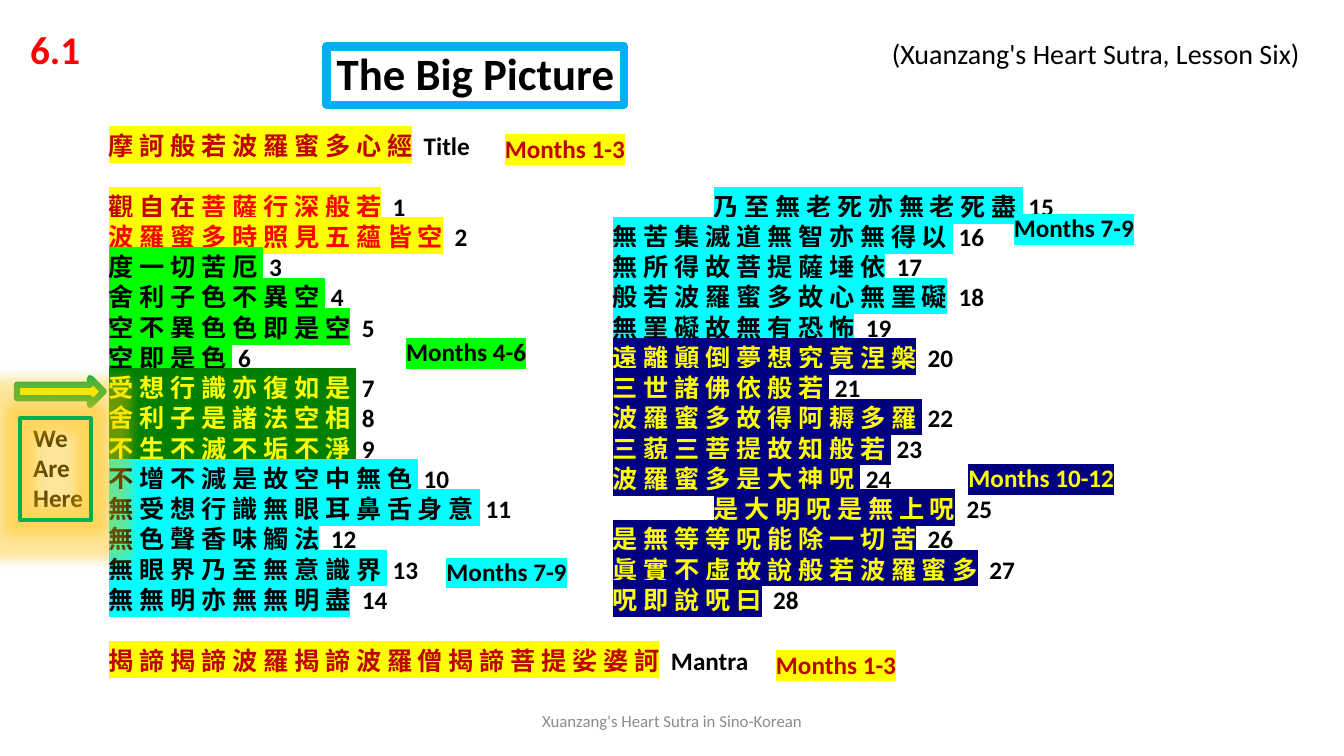
from dataclasses import dataclass

from lxml import etree
from pptx import Presentation
from pptx.dml.color import RGBColor
from pptx.enum.shapes import MSO_SHAPE
from pptx.enum.text import MSO_ANCHOR, MSO_AUTO_SIZE, PP_ALIGN
from pptx.oxml.ns import qn
from pptx.util import Pt

RECTANGLE, RIGHT_ARROW = MSO_SHAPE.RECTANGLE, MSO_SHAPE.RIGHT_ARROW
LEFT, CENTER = PP_ALIGN.LEFT, PP_ALIGN.CENTER
TOP, MIDDLE = MSO_ANCHOR.TOP, MSO_ANCHOR.MIDDLE
NO_AUTOFIT = MSO_AUTO_SIZE.NONE

BLACK = RGBColor(0x00, 0x00, 0x00)
GRAY = RGBColor(0x8C, 0x8C, 0x8C)
RED = RGBColor(0xFF, 0x00, 0x00)
DARK_RED = RGBColor(0xC0, 0x00, 0x00)
YELLOW = RGBColor(0xFF, 0xFF, 0x00)
LIME = RGBColor(0x00, 0xFF, 0x00)
GREEN = RGBColor(0x00, 0x80, 0x00)
CYAN = RGBColor(0x00, 0xFF, 0xFF)
NAVY = RGBColor(0x00, 0x00, 0x80)
FRAME_BLUE = RGBColor(0x00, 0xB0, 0xF0)
MARKER_GREEN = RGBColor(0x00, 0xB0, 0x50)
GLOW_GOLD = RGBColor(0xFF, 0xC0, 0x00)

FONT = "Calibri"
COLUMN_TAB, INDENTED_TAB = 360, 432
SECTION_GAP = 22


@dataclass
class Verse:
    text: str
    label: str
    ink: RGBColor
    shade: RGBColor
    opening: str = ""  # dark red words before the text
    tab: int = COLUMN_TAB


@dataclass
class MonthTag:
    text: str
    left: float
    top: float
    width: float
    ink: RGBColor
    shade: RGBColor


def number_verses(first: int, groups: list) -> list[Verse]:
    """Number the verses of successive (ink, shade, lines) groups."""
    styled = [(line, ink, shade) for ink, shade, lines in groups for line in lines]
    return [Verse(line, str(n), ink, shade)
            for n, (line, ink, shade) in enumerate(styled, first)]


HEADING = Verse("摩 訶 般 若 波 羅 蜜 多 心 經", "Title", DARK_RED, YELLOW)
MANTRA = Verse("揭 諦 揭 諦 波 羅 揭 諦 波 羅 僧 揭 諦 菩 提 娑 婆 訶", "Mantra",
               DARK_RED, YELLOW)
LEFT_VERSES = number_verses(1, [
    (RED, YELLOW, ["菩 薩 行 深 般 若", "波 羅 蜜 多 時 照 見 五 蘊 皆 空"]),
    (BLACK, LIME, ["度 一 切 苦 厄 ", "舍 利 子 色 不 異 空 ",
                   "空 不 異 色 色 即 是 空", "空 即 是 色 "]),
    (YELLOW, GREEN, ["受 想 行 識 亦 復 如 是 ", "舍 利 子 是 諸 法 空 相 ",
                     "不 生 不 滅 不 垢 不 淨 "]),
    (BLACK, CYAN, ["不 增 不 減 是 故 空 中 無 色 ",
                   "無 受 想 行 識 無 眼 耳 鼻 舌 身 意 ",
                   "無 色 聲 香 味 觸 法", "無 眼 界 乃 至 無 意 識 界 ",
                   "無 無 明 亦 無 無 明 盡"]),
])
LEFT_VERSES[0].opening = "觀 自 在 "
RIGHT_VERSES = number_verses(15, [
    (BLACK, CYAN, ["乃 至 無 老 死 亦 無 老 死 盡 ", "無 苦 集 滅 道 無 智 亦 無 得 以 ",
                   "無 所 得 故 菩 提 薩 埵 依", "般 若 波 羅 蜜 多 故 心 無 罣 礙",
                   "無 罣 礙 故 無 有 恐 怖"]),
    (YELLOW, NAVY, ["遠 離 顚 倒 夢 想 究 竟 涅 槃", "三 世 諸 佛 依 般 若 ",
                    "波 羅 蜜 多 故 得 阿 耨 多 羅 ", "三 藐 三 菩 提 故 知 般 若 ",
                    "波 羅 蜜 多 是 大 神 呪 ", "是 大 明 呪 是 無 上 呪",
                    "是 無 等 等 呪 能 除 一 切 苦",
                    "眞 實 不 虛 故 說 般 若 波 羅 蜜 多", "呪 即 說 呪 曰"]),
])
RIGHT_VERSES[0].tab = RIGHT_VERSES[10].tab = INDENTED_TAB

MONTH_TAGS = [
    MonthTag("Months 1-3", 353.5, 91.4, 102, DARK_RED, YELLOW),
    MonthTag("Months 1-3", 547.2, 460.1, 177, DARK_RED, YELLOW),
    MonthTag("Months 7-9", 311.8, 393.8, 104, BLACK, CYAN),
    MonthTag("Months 7-9", 717.1, 148.3, 109, BLACK, CYAN),
    MonthTag("Months 4-6", 283, 236.9, 109, BLACK, LIME),
    MonthTag("Months 10-12", 684.7, 326.9, 122, YELLOW, NAVY),
]


def write(paragraph, text: str, *, size: float = 18, color: RGBColor = BLACK,
          bold: bool = True, shade: RGBColor | None = None) -> None:
    """Add a run, optionally highlighted."""
    run = paragraph.add_run()
    run.text = text
    font = run.font
    font.size, font.bold, font.name = Pt(size), bold, FONT
    font.color.rgb = color
    if shade is not None:
        highlight = etree.Element(qn("a:highlight"))
        etree.SubElement(highlight, qn("a:srgbClr"), val=str(shade))
        font._element.find(qn("a:solidFill")).addnext(highlight)


def set_tab(paragraph, position: float, align: str = "l") -> None:
    stops = etree.SubElement(paragraph._p.get_or_add_pPr(), qn("a:tabLst"))
    etree.SubElement(stops, qn("a:tab"), pos=str(Pt(position)), algn=align)


def add_frame(slide, left: float, top: float, width: float, height: float):
    box = slide.shapes.add_textbox(Pt(left), Pt(top), Pt(width), Pt(height))
    box.text_frame.word_wrap = True
    return box.text_frame


def add_outline(slide, kind, left: float, top: float, width: float, height: float,
                *, line: RGBColor, weight: float, fill: RGBColor | None = None):
    shape = slide.shapes.add_shape(kind, Pt(left), Pt(top), Pt(width), Pt(height))
    shape.shadow.inherit = False
    shape.line.color.rgb, shape.line.width = line, Pt(weight)
    if fill is None:
        shape.fill.background()
    else:
        shape.fill.solid()
        shape.fill.fore_color.rgb = fill
    return shape


def add_glow(shape, radius: float, color: RGBColor, alpha: int) -> None:
    effects = shape._element.spPr.find(qn("a:effectLst"))
    glow = etree.SubElement(effects, qn("a:glow"), rad=str(Pt(radius)))
    tint = etree.SubElement(glow, qn("a:srgbClr"), val=str(color))
    etree.SubElement(tint, qn("a:alpha"), val=str(alpha * 1000))


def write_verse(paragraph, verse: Verse) -> None:
    if verse.opening:
        write(paragraph, verse.opening, color=DARK_RED, shade=verse.shade)
    write(paragraph, verse.text, color=verse.ink, shade=verse.shade)
    gap = " " if verse.text.endswith(" ") else "  "
    write(paragraph, gap + verse.label)


def main() -> None:
    deck = Presentation()
    deck.slide_width, deck.slide_height = Pt(960), Pt(540)
    slide = deck.slides.add_slide(deck.slide_layouts[5])

    # Sutra text: heading, two columns of verses, mantra
    sutra = add_frame(slide, 70.6, 89.3, 701, 400)
    write_verse(sutra.paragraphs[0], HEADING)
    for left_verse, right_verse in zip(LEFT_VERSES, RIGHT_VERSES):
        row = sutra.add_paragraph()
        if left_verse is LEFT_VERSES[0]:
            row.space_before = Pt(SECTION_GAP)
        set_tab(row, right_verse.tab)
        write_verse(row, left_verse)
        write(row, "\t")
        write_verse(row, right_verse)
    mantra = sutra.add_paragraph()
    mantra.space_before = Pt(SECTION_GAP)
    write_verse(mantra, MANTRA)

    # Month tags
    for tag in MONTH_TAGS:
        frame = add_frame(slide, tag.left, tag.top, tag.width, 29)
        write(frame.paragraphs[0], tag.text, color=tag.ink, shade=tag.shade)

    # Lesson header and footer
    header = add_frame(slide, 14.4, 12.2, 929.5, 42).paragraphs[0]
    header.line_spacing, header.space_after = 1.07, Pt(8)
    set_tab(header, 907, "r")
    write(header, "6.1", size=28, color=RED)
    write(header, "\t(Xuanzang's Heart Sutra, Lesson Six)", size=20, bold=False)
    footer = add_frame(slide, 318.2, 500.4, 324, 29)
    footer.vertical_anchor = MIDDLE
    footer.paragraphs[0].alignment = CENTER
    write(footer.paragraphs[0], "Xuanzang's Heart Sutra in Sino-Korean",
          size=12, color=GRAY, bold=False)

    # Framed title
    title = slide.shapes.title
    title.left, title.top, title.width, title.height = Pt(233.3), Pt(28.8), Pt(240.5), Pt(46)
    title.text_frame.auto_size = NO_AUTOFIT
    title.text_frame.vertical_anchor = TOP
    title.text_frame.paragraphs[0].alignment = LEFT
    write(title.text_frame.paragraphs[0], "The Big Picture", size=32)
    add_outline(slide, RECTANGLE, 233.3, 33.1, 212.4, 41.8, line=FRAME_BLUE, weight=6)

    # "We Are Here" marker
    here = add_frame(slide, 16.6, 298.1, 50.4, 72.7)
    for index, word in enumerate(["We", "Are", "Here"]):
        write(here.add_paragraph() if index else here.paragraphs[0], word)
    add_outline(slide, RIGHT_ARROW, 12.2, 270, 61.9, 19.4,
                line=MARKER_GREEN, weight=4.5, fill=YELLOW)
    here_frame = add_outline(slide, RECTANGLE, 14.4, 298.8, 50.4, 72.7,
                             line=MARKER_GREEN, weight=3)
    add_glow(here_frame, 18, GLOW_GOLD, 40)

    deck.save("out.pptx")


if __name__ == "__main__":
    main()
